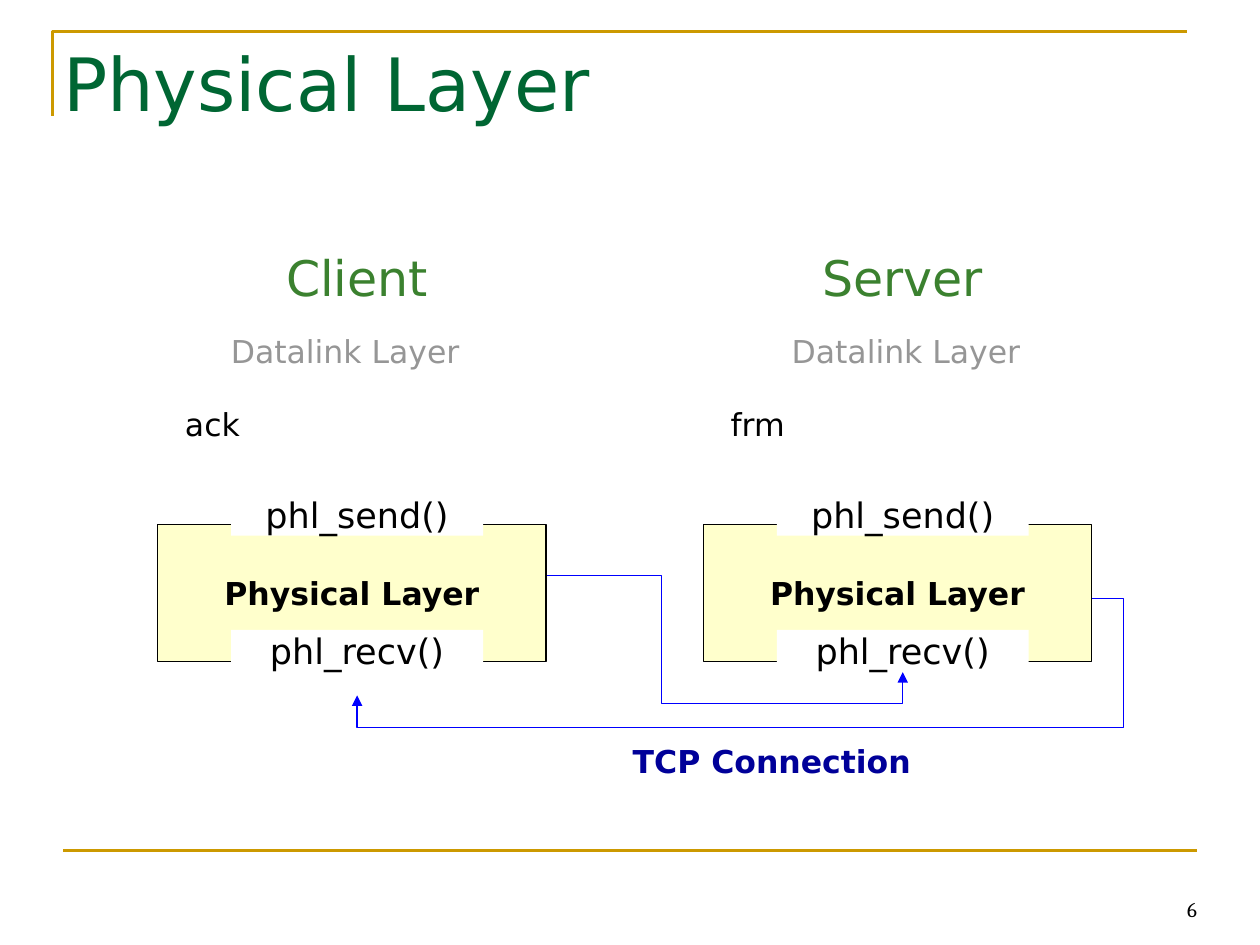
from dataclasses import dataclass

import pptx
import pptx.dml.color
import pptx.enum.shapes
import pptx.enum.text
import pptx.oxml
import pptx.oxml.ns
import pptx.util
from pptx.util import Cm

COLORS = {
    "gold": "CC9900", "title": "006633", "heading": "3B812F", "muted": "969696",
    "box": "FFFFCC", "white": "FFFFFF", "black": "000000", "arrow": "0000FF",
    "caption": "000099",
}
FONT = "DejaVu Sans"
INSET = 0.13
ALIGN = pptx.enum.text.PP_ALIGN
ANCHOR = pptx.enum.text.MSO_ANCHOR
RECTANGLE = pptx.enum.shapes.MSO_SHAPE.RECTANGLE


@dataclass
class Area:
    """Position and size in centimetres."""
    left: float
    top: float
    width: float
    height: float

    def lengths(self) -> list:
        return [Cm(value) for value in (self.left, self.top, self.width, self.height)]


@dataclass
class TextStyle:
    size: int
    color: str
    bold: bool = False
    align: ALIGN = ALIGN.CENTER
    anchor: ANCHOR = ANCHOR.TOP
    font: str = FONT


@dataclass
class Host:
    name: str
    left: float
    heading_width: float
    datalink: Area
    datalink_indent: float
    message: str


HEADING = TextStyle(28, "heading")
DATALINK = TextStyle(18, "muted")
MESSAGE = TextStyle(18, "black", align=ALIGN.LEFT)
FUNCTION = TextStyle(20, "black")
LAYER = TextStyle(18, "black", bold=True, anchor=ANCHOR.MIDDLE)
CAPTION = TextStyle(18, "caption", bold=True)
NUMBER = TextStyle(12, "black", align=ALIGN.RIGHT, anchor=ANCHOR.BOTTOM, font="Cambria")

HOSTS = [
    Host("Client", 3.18, 5.08, Area(2.33, 6.56, 8.47, 1.04), 0.79, "ack"),
    Host("Server", 14.18, 4.23, Area(13.34, 6.56, 8.68, 1.04), 1.17, "frm"),
]
BOX_WIDTH, TAB_WIDTH = 7.83, 5.08
FUNCTION_TOPS = {"phl_send()": 9.95, "phl_recv()": 12.7}

SEND_ROUTE = [(11.01, 11.6), (13.34, 11.6), (13.34, 14.18), (18.2, 14.18), (18.2, 13.55)]
RETURN_ROUTE = [(22.01, 12.07), (22.65, 12.07), (22.65, 14.66), (7.2, 14.66), (7.2, 14.02)]
CORNER_ROUTE = [(1.06, 2.33), (1.06, 0.64), (23.92, 0.64)]


def rgb(name: str) -> pptx.dml.color.RGBColor:
    return pptx.dml.color.RGBColor.from_string(COLORS[name])


def write(shape, text: str, style: TextStyle, inset: float = 0, indent: float = 0) -> None:
    frame = shape.text_frame
    frame.word_wrap = True
    frame.vertical_anchor = style.anchor
    frame.margin_left = Cm(inset + indent)
    frame.margin_right = frame.margin_top = frame.margin_bottom = Cm(inset)
    paragraph = frame.paragraphs[0]
    paragraph.text = text
    paragraph.alignment = style.align
    paragraph.font.name = style.font
    paragraph.font.size = pptx.util.Pt(style.size)
    paragraph.font.bold = style.bold
    paragraph.font.color.rgb = rgb(style.color)


def add_text(slide, area: Area, text: str, style: TextStyle,
             inset: float = INSET, indent: float = 0) -> None:
    write(slide.shapes.add_textbox(*area.lengths()), text, style, inset, indent)


def add_box(slide, area: Area, text: str, style: TextStyle, fill: str, outlined: bool) -> None:
    shape = slide.shapes.add_shape(RECTANGLE, *area.lengths())
    shape.shadow.inherit = False
    shape.fill.solid()
    shape.fill.fore_color.rgb = rgb(fill)
    if outlined:
        shape.line.color.rgb = rgb("black")
        shape.line.width = pptx.util.Pt(0.75)
    else:
        shape.line.fill.background()
    write(shape, text, style)


def add_route(slide, points: list[tuple[float, float]], color: str,
              width: float, arrow: bool = False) -> None:
    start, *rest = [(Cm(x), Cm(y)) for x, y in points]
    builder = slide.shapes.build_freeform(*start)
    builder.add_line_segments(rest, close=False)
    shape = builder.convert_to_shape()
    shape.shadow.inherit = False
    shape.fill.background()
    shape.line.color.rgb = rgb(color)
    shape.line.width = pptx.util.Pt(width)
    if arrow:
        head = pptx.oxml.parse_xml(
            f'<a:tailEnd {pptx.oxml.ns.nsdecls("a")} type="triangle"/>')
        shape.line._get_or_add_ln().append(head)


def add_footer_rule(slide) -> None:
    connector = slide.shapes.add_connector(
        pptx.enum.shapes.MSO_CONNECTOR.STRAIGHT, Cm(1.27), Cm(17.15), Cm(24.13), Cm(17.15))
    connector.line.color.rgb = rgb("gold")
    connector.line.width = pptx.util.Pt(1.5)
    connector._element.spPr.append(
        pptx.oxml.parse_xml(f'<a:effectLst {pptx.oxml.ns.nsdecls("a")}/>'))


def add_host_labels(slide, host: Host) -> None:
    heading_left = host.left + (BOX_WIDTH + 0.2 - host.heading_width) / 2
    add_text(slide, Area(heading_left, 4.87, host.heading_width, 1.44), host.name, HEADING)
    add_text(slide, host.datalink, "Datalink Layer", DATALINK, indent=host.datalink_indent)
    add_text(slide, Area(host.left + 0.42, 8.04, 2.12, 1.04), host.message, MESSAGE)


def add_physical_layer(slide, host: Host) -> None:
    add_box(slide, Area(host.left, 10.58, BOX_WIDTH, 2.75),
            "Physical Layer", LAYER, "box", outlined=True)
    for function, top in FUNCTION_TOPS.items():
        add_box(slide, Area(host.left + 1.48, top, TAB_WIDTH, 0.85),
                function, FUNCTION, "white", outlined=False)


def main() -> None:
    presentation = pptx.Presentation()
    presentation.slide_width, presentation.slide_height = Cm(25.4), Cm(19.05)
    slide = presentation.slides.add_slide(presentation.slide_layouts[5])

    # Frame, title and slide number
    add_route(slide, CORNER_ROUTE, "gold", 1.5)
    add_footer_rule(slide)
    title = slide.shapes.title
    title.left, title.top, title.width, title.height = Area(1.27, 0.76, 22.86, 3.18).lengths()
    write(title, "Physical Layer", TextStyle(42, "title", align=ALIGN.LEFT))
    add_text(slide, Area(18.2, 18.1, 5.93, 0.48), "6", NUMBER, inset=0)

    # Hosts and the two directions of the connection
    add_route(slide, SEND_ROUTE, "arrow", 0.75, arrow=True)
    for host in HOSTS:
        add_host_labels(slide, host)
        add_physical_layer(slide, host)
    add_route(slide, RETURN_ROUTE, "arrow", 0.75, arrow=True)
    add_text(slide, Area(9.74, 14.82, 11.64, 1.04), "TCP Connection", CAPTION)

    presentation.save("out.pptx")


if __name__ == "__main__":
    main()
